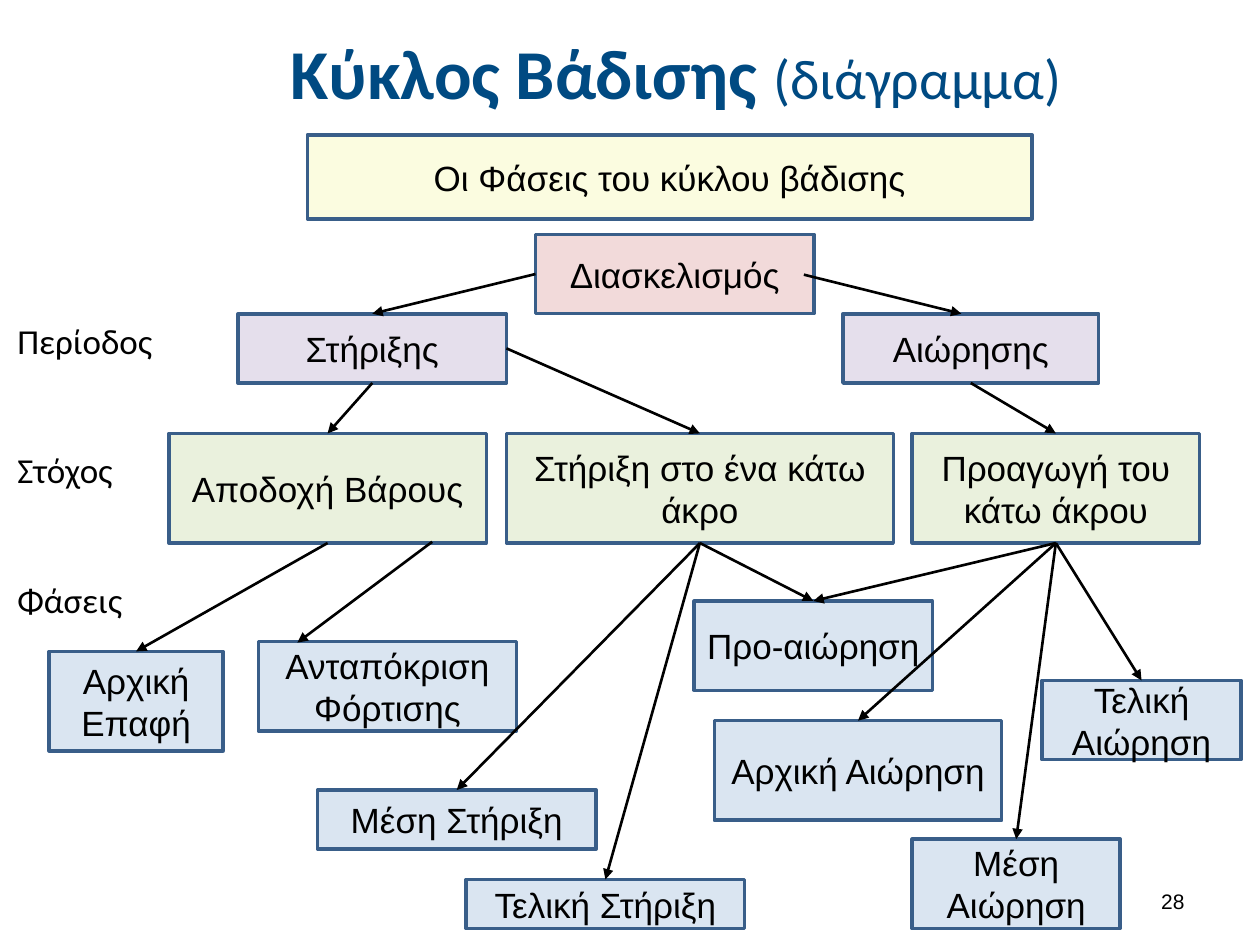
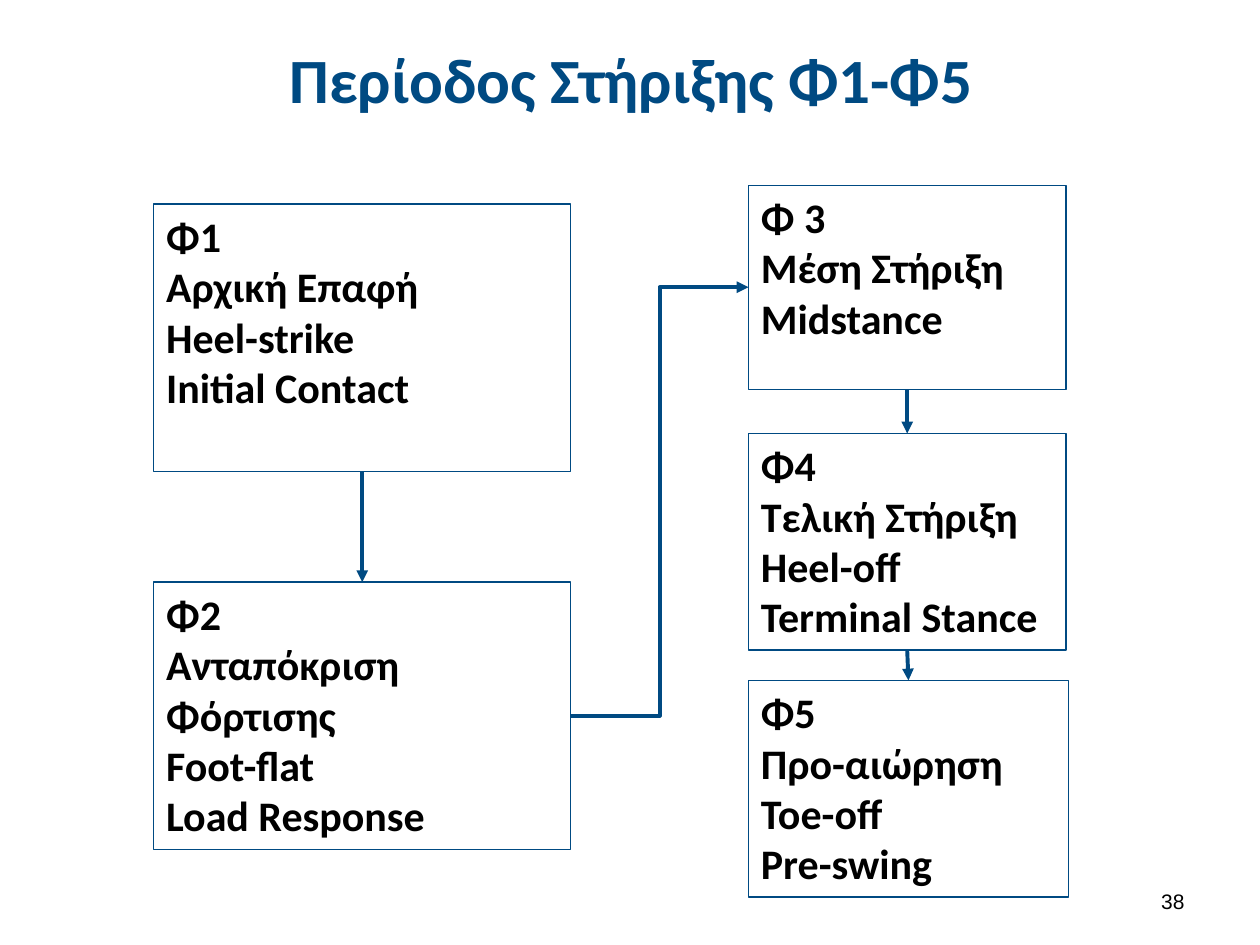
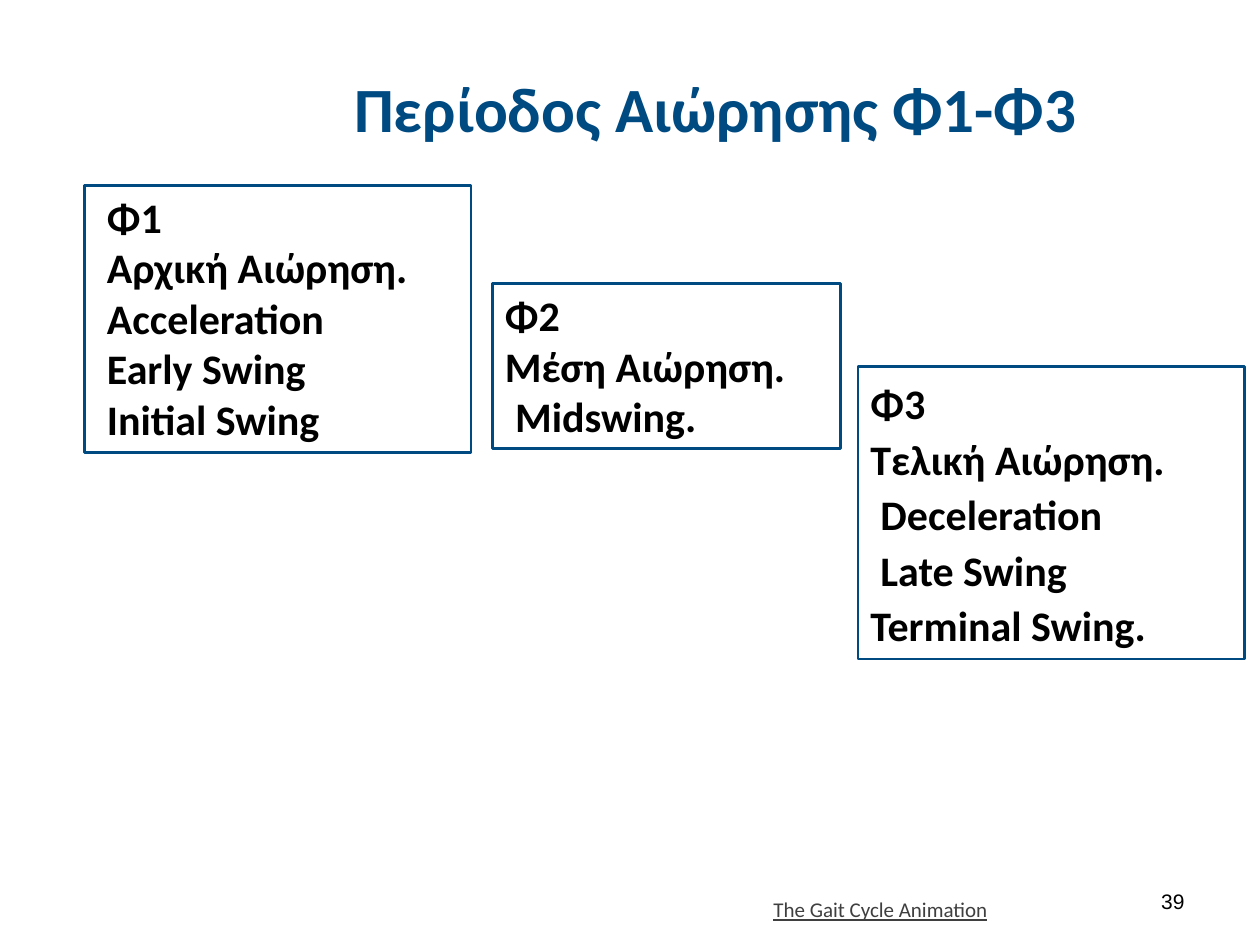
import dataclasses
import typing

import pptx
import pptx.dml.color
import pptx.enum.shapes
import pptx.enum.text
import pptx.oxml
import pptx.oxml.ns
import pptx.util
from pptx.util import Inches

Align = pptx.enum.text.PP_ALIGN
Anchor = pptx.enum.text.MSO_ANCHOR
Connector = pptx.enum.shapes.MSO_CONNECTOR
TOP, LEFT, BOTTOM, RIGHT = range(4)
TITLE_ONLY_LAYOUT = 5


# Theme
@dataclasses.dataclass(frozen=True)
class Theme:
    navy: str = "004A82"
    black: str = "000000"
    gray: str = "3F3F3F"
    box_line: str = "395E89"
    heading_fill: str = "FBFCE0"
    stride_fill: str = "F2DADA"
    period_fill: str = "E5DFEC"
    goal_fill: str = "EAF1DD"
    phase_fill: str = "DAE5F1"
    text_font: str = "Calibri"
    diagram_font: str = "Arial"
    large_title: int = 40
    title: int = 36
    subtitle: int = 32
    card: int = 24
    diagram: int = 20
    small: int = 12


THEME = Theme()


# Repeated elements
class Area(typing.NamedTuple):
    left: float
    top: float
    width: float
    height: float


class Style(typing.NamedTuple):
    font: str
    size: float
    color: str = THEME.black
    bold: bool = False
    underline: bool = False


class Node(typing.NamedTuple):
    text: str
    area: Area
    fill: str


class Card(typing.NamedTuple):
    lines: tuple[str, ...]
    area: Area
    indented: tuple[int, ...] = ()
    spacing: float = 1.0


class Anchorage(typing.NamedTuple):
    box: str
    side: int


class Point(typing.NamedTuple):
    x: float
    y: float


End = Anchorage | Point


class Arrow(typing.NamedTuple):
    start: End
    end: End
    kind: typing.Any = Connector.STRAIGHT


TITLE_STYLE = Style(THEME.text_font, THEME.title, THEME.navy, bold=True)
CARD_STYLE = Style(THEME.text_font, THEME.card, bold=True)
NODE_STYLE = Style(THEME.diagram_font, THEME.diagram)
LABEL_STYLE = Style(THEME.text_font, THEME.diagram)
NUMBER_STYLE = Style(THEME.diagram_font, THEME.small)
CAPTION_STYLE = Style(THEME.text_font, THEME.small, THEME.gray, underline=True)

NUMBER_AREA = Area(7.17, 6.95, 2.33, 0.4)
CARD_INDENT = Inches(0.08)


# Drawing functions
def rgb(color: str) -> pptx.dml.color.RGBColor:
    return pptx.dml.color.RGBColor.from_string(color)


def place(area: Area) -> list[pptx.util.Length]:
    return [Inches(value) for value in area]


def format_span(span, style: Style) -> None:
    font = span.font
    font.name, font.size = style.font, pptx.util.Pt(style.size)
    font.bold, font.underline = style.bold, style.underline
    font.color.rgb = rgb(style.color)


def write(box, text: str, style: Style, align=Align.LEFT, anchor=Anchor.TOP) -> None:
    frame = box.text_frame
    frame.text = text
    frame.word_wrap = True
    frame.auto_size = pptx.enum.text.MSO_AUTO_SIZE.NONE
    frame.vertical_anchor = anchor
    for para in frame.paragraphs:
        para.alignment = align
        for span in para.runs:
            format_span(span, style)


def add_text(page, text: str, area: Area, style: Style, **layout) -> None:
    write(page.shapes.add_textbox(*place(area)), text, style, **layout)


def add_page(deck, title: str, area: Area, number: int):
    page = deck.slides.add_slide(deck.slide_layouts[TITLE_ONLY_LAYOUT])
    heading = page.shapes.title
    heading.left, heading.top, heading.width, heading.height = place(area)
    write(heading, title, TITLE_STYLE, align=Align.CENTER, anchor=Anchor.MIDDLE)
    add_text(page, str(number), NUMBER_AREA, NUMBER_STYLE,
             align=Align.RIGHT, anchor=Anchor.MIDDLE)
    return page


def add_box(page, area: Area, line: str, weight: float, fill: str | None = None):
    box = page.shapes.add_shape(pptx.enum.shapes.MSO_SHAPE.RECTANGLE, *place(area))
    box.shadow.inherit = False
    box.line.color.rgb = rgb(line)
    box.line.width = pptx.util.Pt(weight)
    if fill:
        box.fill.solid()
        box.fill.fore_color.rgb = rgb(fill)
    else:
        box.fill.background()
    return box


def add_node(page, node: Node):
    box = add_box(page, node.area, THEME.box_line, 2, node.fill)
    write(box, node.text, NODE_STYLE, align=Align.CENTER, anchor=Anchor.MIDDLE)
    return box


def add_card(page, card: Card, weight: float):
    box = add_box(page, card.area, THEME.navy, weight)
    write(box, "\n".join(card.lines), CARD_STYLE)
    for index, para in enumerate(box.text_frame.paragraphs):
        para.line_spacing = card.spacing
        if index in card.indented:
            para._p.get_or_add_pPr().set("marL", str(CARD_INDENT))
    return box


def add_arrow(page, arrow: Arrow, boxes: dict, color: str, weight: float) -> None:
    connector = page.shapes.add_connector(arrow.kind, 0, 0, 0, 0)
    if isinstance(arrow.start, Point):
        connector.begin_x, connector.begin_y = map(Inches, arrow.start)
    else:
        connector.begin_connect(boxes[arrow.start.box], arrow.start.side)
    if isinstance(arrow.end, Point):
        connector.end_x, connector.end_y = map(Inches, arrow.end)
    else:
        connector.end_connect(boxes[arrow.end.box], arrow.end.side)
    connector.line.color.rgb = rgb(color)
    connector.line.width = pptx.util.Pt(weight)
    namespace = pptx.oxml.ns.nsdecls("a")
    line = connector.line._get_or_add_ln()
    line.append(pptx.oxml.parse_xml(f'<a:tailEnd {namespace} type="triangle"/>'))
    connector._element.spPr.append(pptx.oxml.parse_xml(f"<a:effectLst {namespace}/>"))


def down(source: str, target: str) -> Arrow:
    return Arrow(Anchorage(source, BOTTOM), Anchorage(target, TOP))


# Gait cycle diagram
STRIDE, STANCE, SWING = "Διασκελισμός", "Στήριξης", "Αιώρησης"
LOADING, SINGLE, ADVANCE = (
    "Αποδοχή Βάρους", "Στήριξη στο ένα κάτω άκρο", "Προαγωγή του κάτω άκρου")
CONTACT, RESPONSE = "Αρχική Επαφή", "Ανταπόκριση Φόρτισης"
MID_STANCE, END_STANCE, PRE_SWING = "Μέση Στήριξη", "Τελική Στήριξη", "Προ-αιώρηση"
EARLY_SWING, MID_SWING, END_SWING = "Αρχική Αιώρηση", "Μέση Αιώρηση", "Τελική Αιώρηση"

NODES = (
    Node("Οι Φάσεις του κύκλου βάδισης", Area(2.44, 1.07, 5.75, 0.67), THEME.heading_fill),
    Node(STRIDE, Area(4.25, 1.86, 2.21, 0.63), THEME.stride_fill),
    Node(STANCE, Area(1.89, 2.49, 2.13, 0.55), THEME.period_fill),
    Node(SWING, Area(6.69, 2.49, 2.03, 0.55), THEME.period_fill),
    Node(LOADING, Area(1.34, 3.44, 2.52, 0.87), THEME.goal_fill),
    Node(SINGLE, Area(4.02, 3.44, 3.07, 0.87), THEME.goal_fill),
    Node(ADVANCE, Area(7.24, 3.44, 2.28, 0.87), THEME.goal_fill),
    Node(CONTACT, Area(0.39, 5.17, 1.38, 0.79), THEME.phase_fill),
    Node(RESPONSE, Area(2.05, 5.09, 2.05, 0.71), THEME.phase_fill),
    Node(MID_STANCE, Area(2.52, 6.27, 2.21, 0.47), THEME.phase_fill),
    Node(END_STANCE, Area(3.7, 6.98, 2.21, 0.39), THEME.phase_fill),
    Node(PRE_SWING, Area(5.51, 4.77, 1.89, 0.71), THEME.phase_fill),
    Node(EARLY_SWING, Area(5.67, 5.72, 2.28, 0.79), THEME.phase_fill),
    Node(MID_SWING, Area(7.24, 6.66, 1.65, 0.71), THEME.phase_fill),
    Node(END_SWING, Area(8.27, 5.4, 1.58, 0.63), THEME.phase_fill),
)
ROW_LABELS = {"Περίοδος": 2.49, "Στόχος": 3.51, "Φάσεις": 4.54}
DIAGRAM_ARROWS = (
    Arrow(Anchorage(STRIDE, LEFT), Anchorage(STANCE, TOP)),
    Arrow(Point(6.38, 2.18), Point(7.63, 2.49)),
    down(STANCE, LOADING),
    Arrow(Anchorage(STANCE, RIGHT), Anchorage(SINGLE, TOP)),
    down(SWING, ADVANCE),
    down(LOADING, CONTACT),
    Arrow(Point(3.43, 4.3), Point(2.36, 5.1)),
    *(down(SINGLE, phase) for phase in (MID_STANCE, END_STANCE, PRE_SWING)),
    *(down(ADVANCE, phase) for phase in (PRE_SWING, EARLY_SWING, MID_SWING, END_SWING)),
)


def add_diagram_page(deck) -> None:
    page = add_page(deck, "Κύκλος Βάδισης ", Area(1.22, 0.13, 8.29, 0.87), 28)
    para = page.shapes.title.text_frame.paragraphs[0]
    para.runs[0].font.size = pptx.util.Pt(THEME.large_title)
    span = para.add_run()
    span.text = "(διάγραμμα)"
    format_span(span, TITLE_STYLE._replace(size=THEME.subtitle, bold=False))
    boxes = {node.text: add_node(page, node) for node in NODES}
    for label, top in ROW_LABELS.items():
        add_text(page, label, Area(0.04, top, 1.3, 0.44), LABEL_STYLE)
    for arrow in DIAGRAM_ARROWS:
        add_arrow(page, arrow, boxes, THEME.black, 1.5)


# Stance phases
STANCE_CARDS = (
    Card(("Φ1", "Αρχική Επαφή", "Heel-strike", "Initial Contact"),
         Area(1.22, 1.62, 3.31, 2.12)),
    Card(("Φ2", "Ανταπόκριση Φόρτισης", "Foot-flat", "Load Response"),
         Area(1.22, 4.62, 3.31, 2.12)),
    Card(("Φ 3", "Μέση Στήριξη", "Midstance"), Area(5.94, 1.47, 2.52, 1.62)),
    Card(("Φ4", "Τελική Στήριξη", "Heel-off", "Terminal Stance"),
         Area(5.94, 3.44, 2.52, 1.72)),
    Card(("Φ5", "Προ-αιώρηση", "Toe-off", "Pre-swing"), Area(5.94, 5.4, 2.54, 1.72)),
)
STANCE_ARROWS = (
    down("Φ1", "Φ2"),
    Arrow(Anchorage("Φ2", RIGHT), Anchorage("Φ 3", LEFT), Connector.ELBOW),
    down("Φ 3", "Φ4"),
    down("Φ4", "Φ5"),
)


def add_stance_page(deck) -> None:
    page = add_page(deck, "Περίοδος Στήριξης Φ1-Φ5", Area(0.51, 0.13, 9, 0.99), 38)
    boxes = {card.lines[0]: add_card(page, card, 0.75) for card in STANCE_CARDS}
    for arrow in STANCE_ARROWS:
        add_arrow(page, arrow, boxes, THEME.navy, 2.25)


# Swing phases
SWING_CARDS = (
    Card(("Φ1", "Αρχική Αιώρηση.", "Acceleration", "Early Swing", "Initial Swing"),
         Area(0.67, 1.47, 3.07, 2.12), indented=(0, 1, 2, 3, 4)),
    Card(("Φ2", "Μέση Αιώρηση.", "Midswing."),
         Area(3.91, 2.25, 2.76, 1.31), indented=(2,)),
    Card(("Φ3", "Τελική Αιώρηση.", "Deceleration", "Late Swing", "Terminal Swing."),
         Area(6.81, 2.91, 3.07, 2.32), indented=(2, 3), spacing=1.1),
)


def add_swing_page(deck) -> None:
    page = add_page(deck, "Περίοδος Αιώρησης Φ1-Φ3", Area(1.85, 0.36, 7.66, 0.99), 39)
    for card in SWING_CARDS:
        add_card(page, card, 1.5)
    add_text(page, "The Gait Cycle Animation", Area(6.04, 7.07, 1.92, 0.3), CAPTION_STYLE)


def main() -> None:
    deck = pptx.Presentation()
    deck.slide_width, deck.slide_height = Inches(10), Inches(7.5)
    add_diagram_page(deck)
    add_stance_page(deck)
    add_swing_page(deck)
    deck.save("out.pptx")


if __name__ == "__main__":
    main()
